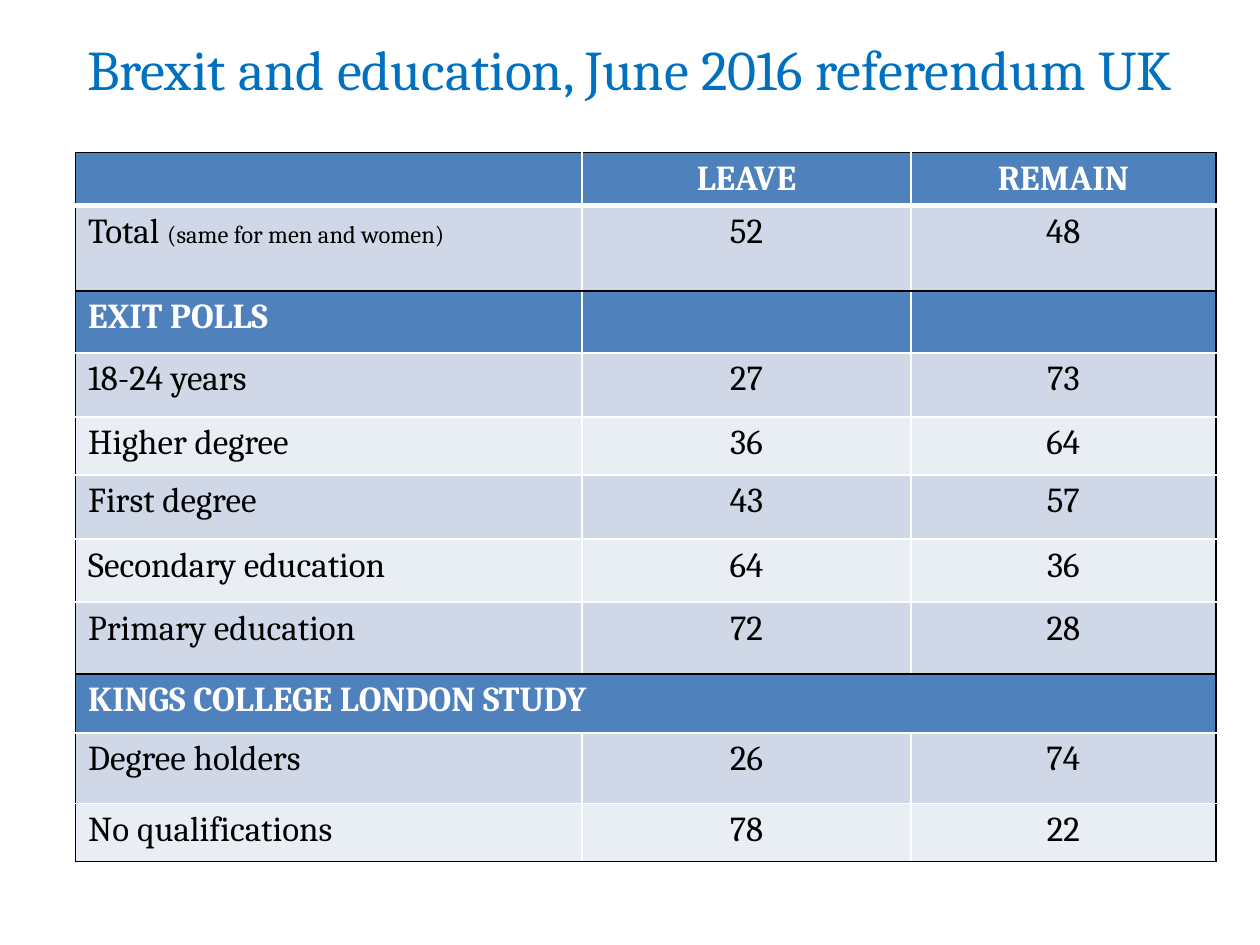
from dataclasses import dataclass

from lxml import etree
from pptx import Presentation
from pptx.dml.color import RGBColor
from pptx.enum.text import MSO_ANCHOR, MSO_AUTO_SIZE, PP_ALIGN
from pptx.oxml.ns import qn
from pptx.util import Inches, Pt

LEFT, CENTER = PP_ALIGN.LEFT, PP_ALIGN.CENTER
MIDDLE = MSO_ANCHOR.MIDDLE
NO_AUTOFIT = MSO_AUTO_SIZE.NONE
TITLE_ONLY = 5


@dataclass(frozen=True)
class Theme:
    font: str = "Cambria"
    title: str = "0070C0"
    header: str = "4F81BD"
    bands: tuple = ("E9EDF4", "D0D8E8")
    dark: str = "000000"
    light: str = "FFFFFF"
    title_size: int = 32
    body_size: int = 20
    note_size: int = 14


THEME = Theme()

# Table grid, in inches
TABLE_LEFT, TABLE_TOP = 0.6, 1.21
COL_WIDTHS = (4.02, 2.61, 2.42)
ROW_HEIGHTS = (0.32, 0.68, 0.49, 0.51, 0.46, 0.51, 0.5, 0.57, 0.47, 0.56, 0.46)

NOTE = "(same for men and women)"
ROWS = (
    ("", "LEAVE", "REMAIN"),
    ("Total ", "52", "48"),
    ("EXIT POLLS", "", ""),
    ("18-24 years", "27", "73"),
    ("Higher degree", "36", "64"),
    ("First degree", "43", "57"),
    ("Secondary education", "64", "36"),
    ("Primary education", "72", "28"),
    ("KINGS COLLEGE LONDON STUDY", "", ""),
    ("Degree holders", "26", "74"),
    ("No qualifications", "78", "22"),
)
HEADER_ROW, TOTAL_ROW, EXIT_ROW, STUDY_ROW = 0, 1, 2, 8
HEADINGS = (HEADER_ROW, EXIT_ROW, STUDY_ROW)
LAST_ROW, LAST_COL = len(ROWS) - 1, len(COL_WIDTHS) - 1


def add_text(p, text, size=THEME.body_size, color=THEME.dark, bold=False, align=LEFT):
    """Append a formatted run to a paragraph."""
    p.alignment = align
    r = p.add_run()
    r.text = text
    r.font.name = THEME.font
    r.font.size = Pt(size)
    r.font.bold = bold
    r.font.color.rgb = RGBColor.from_string(color)


def set_borders(cell, **sides):
    """Draw cell borders; each side is a (colour, points) pair."""
    props = cell._tc.get_or_add_tcPr()
    for i, side in enumerate("LRTB"):
        color, width = sides[side]
        ln = etree.Element(qn(f"a:ln{side}"), w=str(Pt(width)))
        fill = etree.SubElement(ln, qn("a:solidFill"))
        etree.SubElement(fill, qn("a:srgbClr"), val=color)
        props.insert(i, ln)


def cell_borders(row, col, end_col):
    """Dark outer frame and section breaks, light inner rules."""
    def line(is_dark, width=1):
        return (THEME.dark if is_dark else THEME.light, width)

    below = row + 1
    return {
        "L": line(col == 0),
        "R": line(end_col == LAST_COL),
        "T": line(row in HEADINGS) if row != TOTAL_ROW else line(False, 3),
        "B": line(row == LAST_ROW or below in HEADINGS, 3 if row == HEADER_ROW else 1),
    }


def add_title(s, prs, text):
    title = s.shapes.title
    title.left, title.top = 0, Inches(0.22)
    title.width, title.height = prs.slide_width, Inches(0.64)
    tf = title.text_frame
    tf.word_wrap = True
    tf.auto_size = NO_AUTOFIT
    tf.vertical_anchor = MIDDLE
    add_text(tf.paragraphs[0], text, size=THEME.title_size,
             color=THEME.title, align=CENTER)


def fill_cell(cell, row, col, text):
    heading = row in HEADINGS
    cell.fill.solid()
    color = THEME.header if heading else THEME.bands[row % 2]
    cell.fill.fore_color.rgb = RGBColor.from_string(color)
    end_col = LAST_COL if row == STUDY_ROW else col
    set_borders(cell, **cell_borders(row, col, end_col))
    if text:
        add_text(cell.text_frame.paragraphs[0], text, bold=heading,
                 color=THEME.light if heading else THEME.dark,
                 align=CENTER if col else LEFT)


def add_results_table(s):
    table = s.shapes.add_table(
        len(ROWS), len(COL_WIDTHS), Inches(TABLE_LEFT), Inches(TABLE_TOP),
        Inches(sum(COL_WIDTHS)), Inches(sum(ROW_HEIGHTS))).table
    for column, width in zip(table.columns, COL_WIDTHS):
        column.width = Inches(width)
    for row, height in zip(table.rows, ROW_HEIGHTS):
        row.height = Inches(height)

    # The study heading runs across the whole table
    table.cell(STUDY_ROW, 0).merge(table.cell(STUDY_ROW, LAST_COL))
    for i, values in enumerate(ROWS):
        for j, text in enumerate(values):
            fill_cell(table.cell(i, j), i, j, text)

    # Small remark after the total
    total = table.cell(TOTAL_ROW, 0).text_frame.paragraphs[0]
    add_text(total, NOTE, size=THEME.note_size)


def main():
    prs = Presentation()
    prs.slide_width, prs.slide_height = Inches(10), Inches(7.5)
    s = prs.slides.add_slide(prs.slide_layouts[TITLE_ONLY])
    add_results_table(s)
    add_title(s, prs, "Brexit and education, June 2016 referendum UK")
    prs.save("out.pptx")


if __name__ == "__main__":
    main()
